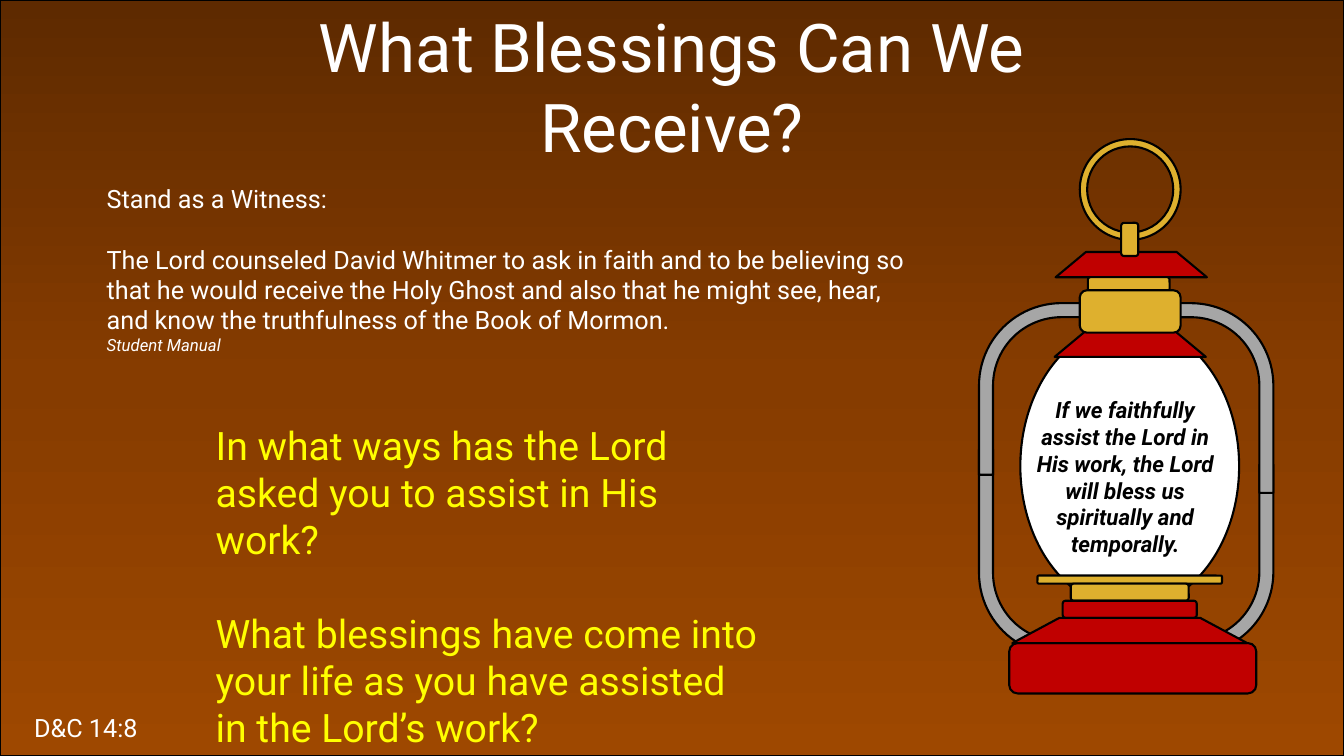
"""Build the slide about the blessings of assisting in the Lord's work, with its lantern."""
import copy
import dataclasses
import typing

import pptx
import pptx.dml.color
import pptx.enum.shapes
import pptx.enum.text
import pptx.util

Inches = pptx.util.Inches
Pt = pptx.util.Pt
SHAPE = pptx.enum.shapes.MSO_SHAPE
ALIGN = pptx.enum.text.PP_ALIGN

WHITE, BLACK, YELLOW = "FFFFFF", "000000", "FFFF00"
RED, GOLD, GRAY = "C00000", "DEB02E", "A6A6A6"
BACKGROUND = ["5E2A00", "863C00", "9E4800"]
HANDLE_BEND = (0.098, 0.139, 0.119, 0.576)


@dataclasses.dataclass
class Part:
    kind: typing.Any
    left: float
    top: float
    width: float
    height: float
    fill: str
    rotation: int = 0
    flips: str = ""
    adjustments: tuple = ()


@dataclasses.dataclass
class Line:
    text: str
    size: int
    color: str = WHITE
    space_before: float = 0
    font: dict = dataclasses.field(default_factory=dict)


@dataclasses.dataclass
class Caption:
    left: float
    top: float
    width: float
    height: float
    lines: list
    alignment: typing.Any = ALIGN.LEFT


def handle(left: float, top: float, height: float, flips: str = "") -> Part:
    return Part(SHAPE.BENT_ARROW, left, top, 1.42, height, GRAY, flips=flips,
                adjustments=HANDLE_BEND)


def slope(left: float, top: float, width: float) -> Part:
    return Part(SHAPE.FLOWCHART_MANUAL_OPERATION, left, top, width, 0.25, RED, rotation=180)


def band(left: float, top: float, width: float, height: float, fill: str,
         rotation: int = 0) -> Part:
    return Part(SHAPE.ROUNDED_RECTANGLE, left, top, width, height, fill, rotation)


LANTERN = [
    handle(11.21, 4.61, 2.01, "HV"),
    handle(11.21, 2.88, 2.01, "H"),
    handle(9.71, 4.46, 2.17, "V"),
    handle(9.71, 2.88, 1.83),
    Part(SHAPE.OVAL, 10.12, 3.21, 2.17, 2.83, WHITE),
    slope(10.46, 3.29, 1.5),
    slope(10.47, 2.5, 1.5),
    band(10.79, 2.75, 0.81, 0.14, GOLD),
    band(10.71, 2.88, 1, 0.42, GOLD),
    Part(SHAPE.DONUT, 10.71, 1.38, 1, 1, GOLD, adjustments=(0.073,)),
    band(11.04, 2.29, 0.33, 0.17, GOLD, 270),
    band(10.29, 5.71, 1.83, 0.08, GOLD),
    band(10.01, 6.38, 2.45, 0.5, RED),
    band(10.62, 5.79, 1.17, 0.17, GOLD),
    band(10.54, 5.96, 1.33, 0.17, RED),
    slope(10.04, 6.13, 2.33),
]

CAPTIONS = [
    Caption(1.83, 0, 9.67, 0.91, [Line("What Blessings Can We Receive?", 48)], ALIGN.CENTER),
    Caption(2.04, 4.13, 5.58, 2.93, [
        Line("In what ways has the Lord asked you to assist in His work?", 28, YELLOW),
        Line("What blessings have come into your life as you have assisted in the Lord’s work?",
             28, YELLOW, 33.6),
    ]),
    Caption(0.24, 7.02, 5, 0.4, [Line("D&C 14:8", 18)]),
    Caption(0.96, 1.77, 8.21, 1.82, [
        Line("Stand as a Witness:", 18),
        Line("The Lord counseled David Whitmer to ask in faith and to be believing so that he "
             "would receive the Holy Ghost and also that he might see, hear, and know the "
             "truthfulness of the Book of Mormon.", 18, space_before=21.6),
        Line("Student Manual", 12, font={"italic": True}),
    ]),
]

LANTERN_CAPTION = Caption(10.12, 3.88, 2.08, 1.45, [
    Line("If we faithfully assist the Lord in His work, the Lord will bless us spiritually "
         "and temporally.", 16, BLACK, font={"bold": True, "italic": True}),
], ALIGN.CENTER)


def rgb(value: str) -> pptx.dml.color.RGBColor:
    return pptx.dml.color.RGBColor.from_string(value)


def set_format(target: typing.Any, values: dict) -> None:
    for name, value in values.items():
        setattr(target, name, value)


def draw_part(page: typing.Any, part: Part) -> typing.Any:
    shape = page.shapes.add_shape(part.kind, Inches(part.left), Inches(part.top),
                                  Inches(part.width), Inches(part.height))
    shape.shadow.inherit = False
    shape.rotation = part.rotation
    for index, value in enumerate(part.adjustments):
        shape.adjustments[index] = value
    for axis in part.flips:
        shape._element.spPr.xfrm.set("flip" + axis, "1")
    shape.fill.solid()
    shape.fill.fore_color.rgb = rgb(part.fill)
    shape.line.color.rgb = rgb(BLACK)
    shape.line.width = Pt(1.5)
    return shape


def draw_background(page: typing.Any) -> None:
    shape = draw_part(page, Part(SHAPE.RECTANGLE, 0, 0, 13.33, 7.5, BACKGROUND[0]))
    shape.fill.gradient()
    shape.fill.gradient_angle = 270
    stop_list = shape._element.spPr.xpath("./a:gradFill/a:gsLst")[0]
    stop_list.append(copy.deepcopy(stop_list[0]))
    for index, (stop, color) in enumerate(zip(shape.fill.gradient_stops, BACKGROUND)):
        stop.position = index / 2
        stop.color.rgb = rgb(color)


def draw_caption(page: typing.Any, caption: Caption) -> None:
    box = page.shapes.add_textbox(Inches(caption.left), Inches(caption.top),
                                  Inches(caption.width), Inches(caption.height))
    frame = box.text_frame
    frame.word_wrap = True
    frame.auto_size = pptx.enum.text.MSO_AUTO_SIZE.SHAPE_TO_FIT_TEXT
    for index, line in enumerate(caption.lines):
        para = frame.add_paragraph() if index else frame.paragraphs[0]
        set_format(para, {"alignment": caption.alignment, "space_before": Pt(line.space_before)})
        span = para.add_run()
        span.text = line.text
        set_format(span.font, {"name": "Roboto", "size": Pt(line.size), **line.font})
        span.font.color.rgb = rgb(line.color)


def main() -> None:
    deck = pptx.Presentation()
    set_format(deck, {"slide_width": Inches(13.33), "slide_height": Inches(7.5)})
    page = deck.slides.add_slide(deck.slide_layouts[6])
    draw_background(page)
    for caption in CAPTIONS:
        draw_caption(page, caption)
    for part in LANTERN:
        draw_part(page, part)
    draw_caption(page, LANTERN_CAPTION)
    deck.save("out.pptx")


if __name__ == "__main__":
    main()
